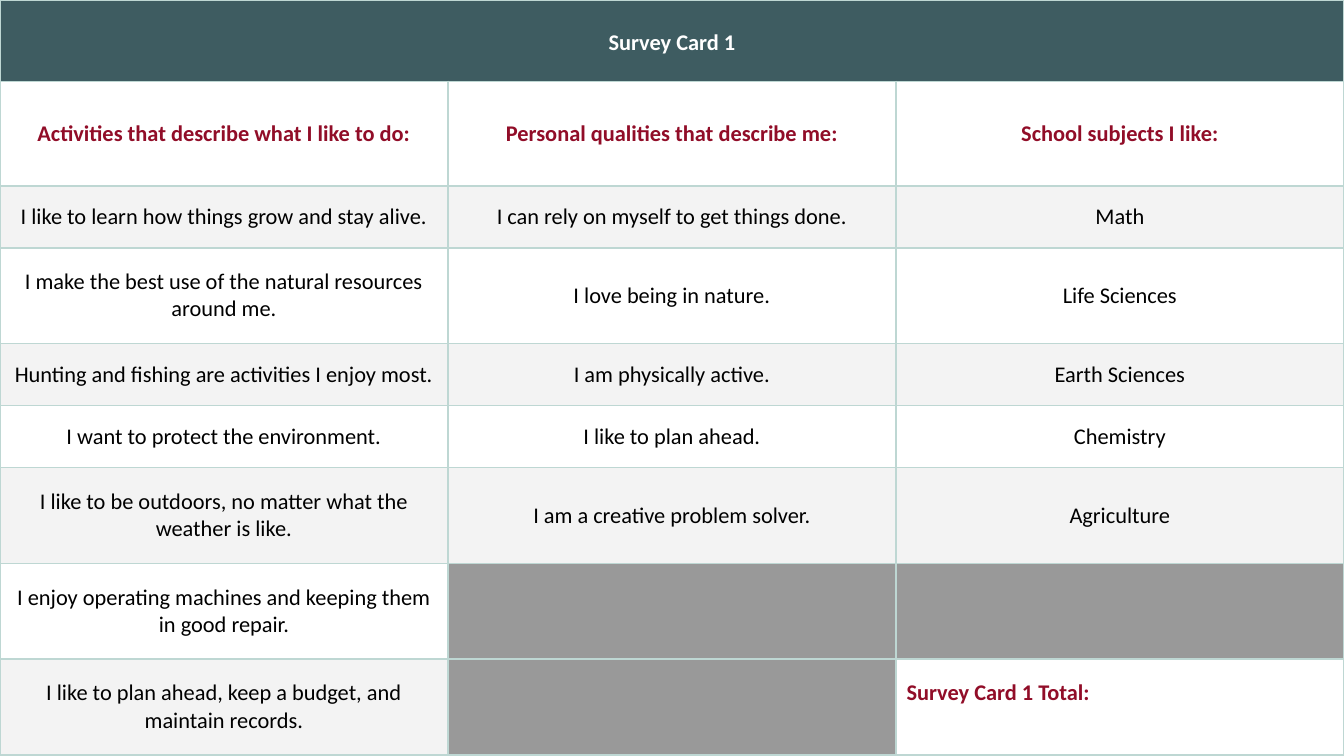
from lxml.etree import SubElement
from pptx import Presentation
from pptx.dml.color import RGBColor
from pptx.enum.text import MSO_ANCHOR, PP_ALIGN
from pptx.oxml.ns import qn
from pptx.util import Cm, Pt

WHITE = RGBColor(0xFF, 0xFF, 0xFF)
BLACK = RGBColor(0x00, 0x00, 0x00)
TEAL = RGBColor(0x3E, 0x5C, 0x61)
CRIMSON = RGBColor(0x91, 0x0D, 0x28)
STRIPE = RGBColor(0xF3, 0xF3, 0xF3)
BLOCKED = RGBColor(0x99, 0x99, 0x99)
BORDER = RGBColor(0xBE, 0xD7, 0xD3)

TITLE = "Survey Card 1"
TOTAL = "Survey Card 1 Total:"
HEADINGS = [
    "Activities that describe what I like to do:",
    "Personal qualities that describe me:",
    "School subjects I like:",
]
ANSWERS = [
    ["I like to learn how things grow and stay alive.",
     "I can rely on myself to get things done.", "Math"],
    ["I make the best use of the natural resources around me.",
     "I love being in nature.", "Life Sciences"],
    ["Hunting and fishing are activities I enjoy most.",
     "I am physically active.", "Earth Sciences"],
    ["I want to protect the environment.", "I like to plan ahead.", "Chemistry"],
    ["I like to be outdoors, no matter what the weather is like.",
     "I am a creative problem solver.", "Agriculture"],
    ["I enjoy operating machines and keeping them in good repair.", None, None],
    ["I like to plan ahead, keep a budget, and maintain records.", None, TOTAL],
]
ONE_LINE, TWO_LINES = 1.17, 1.81
ROW_HEIGHTS = [1.54, 1.97, ONE_LINE, TWO_LINES, ONE_LINE, ONE_LINE] + [TWO_LINES] * 3


class SurveySlide:
    font = "Calibri"
    size = Pt(12)
    margin = Cm(0.2)

    def __init__(self, slide):
        self.slide = slide

    def grid(self, width, row_heights, column_count):
        frame = self.slide.shapes.add_table(
            len(row_heights), column_count, 0, 0, width, Cm(sum(row_heights)))
        table = frame.table
        table.first_row = table.horz_banding = False
        for column in table.columns:
            column.width = width // column_count
        for row, height in zip(table.rows, row_heights):
            row.height = Cm(height)
        for cell in table.iter_cells():
            self.border(cell)
        return table

    def border(self, cell):
        properties = cell._tc.get_or_add_tcPr()
        for side in ("lnL", "lnR", "lnT", "lnB"):
            line = SubElement(properties, qn(f"a:{side}"), w=str(Pt(1)))
            fill = SubElement(line, qn("a:solidFill"))
            SubElement(fill, qn("a:srgbClr"), val=str(BORDER))

    def paint(self, cell, color):
        cell.fill.solid()
        cell.fill.fore_color.rgb = color

    def label(self, cell, text, color=BLACK, bold=False, align=PP_ALIGN.CENTER):
        cell.vertical_anchor = MSO_ANCHOR.MIDDLE
        cell.margin_left = cell.margin_right = self.margin
        cell.margin_top = cell.margin_bottom = self.margin
        paragraph = cell.text_frame.paragraphs[0]
        paragraph.text = text
        paragraph.alignment = align
        for run in paragraph.runs:
            run.font.name = self.font
            run.font.size = self.size
            run.font.bold = bold
            run.font.color.rgb = color
        return paragraph


def main():
    presentation = Presentation()
    presentation.slide_width = Cm(25.4)
    presentation.slide_height = Cm(14.28)
    survey = SurveySlide(presentation.slides.add_slide(presentation.slide_layouts[6]))
    table = survey.grid(presentation.slide_width, ROW_HEIGHTS, len(HEADINGS))

    banner = table.cell(0, 0)
    banner.merge(table.cell(0, len(HEADINGS) - 1))
    survey.paint(banner, TEAL)
    title = survey.label(banner, TITLE, WHITE, bold=True)
    title.line_spacing = 1.15
    title.space_after = Pt(6)

    for column, heading in enumerate(HEADINGS):
        cell = table.cell(1, column)
        survey.paint(cell, WHITE)
        survey.label(cell, heading, CRIMSON, bold=True).space_before = Pt(10)

    for index, answers in enumerate(ANSWERS):
        for column, answer in enumerate(answers):
            cell = table.cell(index + 2, column)
            if answer is None:
                survey.paint(cell, BLOCKED)
            elif answer == TOTAL:
                survey.paint(cell, WHITE)
                total = survey.label(cell, answer, CRIMSON, True, PP_ALIGN.LEFT)
                total.space_before = Pt(10)
                cell.margin_bottom = Cm(0.72)
            else:
                survey.paint(cell, WHITE if index % 2 else STRIPE)
                survey.label(cell, answer)

    presentation.save("out.pptx")


if __name__ == "__main__":
    main()
